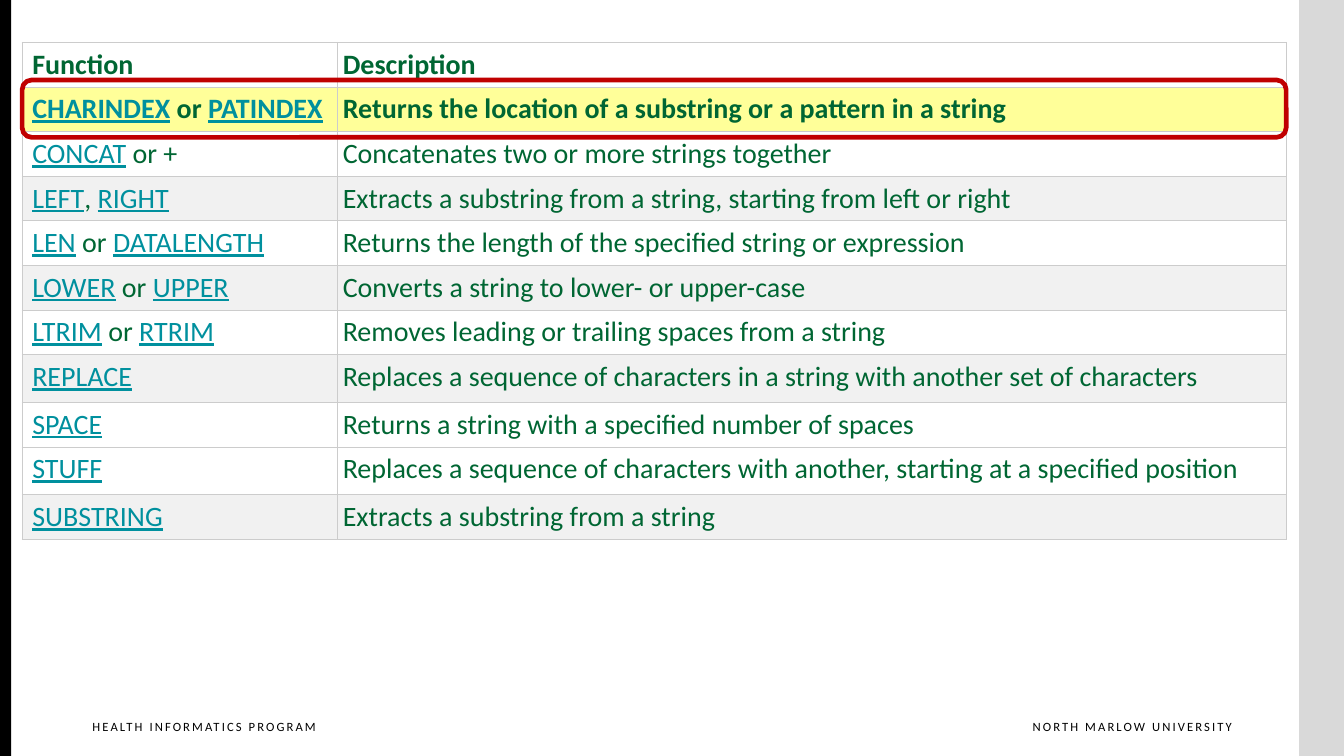
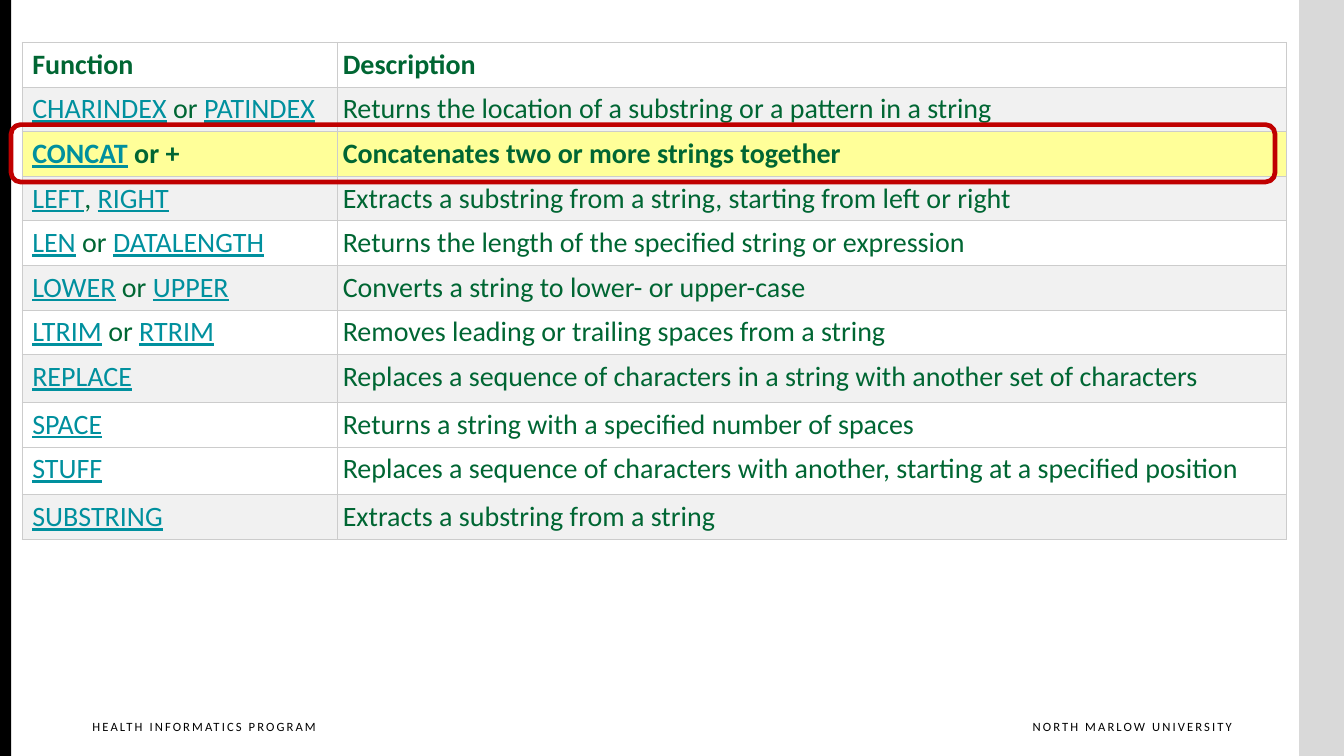
"""Builds two slides of SQL string functions, each with one row highlighted."""
from lxml import etree
from pptx import Presentation
from pptx.dml.color import RGBColor
from pptx.enum.shapes import MSO_SHAPE
from pptx.enum.text import PP_ALIGN
from pptx.oxml.ns import qn
from pptx.util import Pt

RECT, ROUNDED = MSO_SHAPE.RECTANGLE, MSO_SHAPE.ROUNDED_RECTANGLE
LEFT, RIGHT = PP_ALIGN.LEFT, PP_ALIGN.RIGHT

HEADER = (("Function",), "Description")
FUNCTIONS = [
    (("CHARINDEX", " or ", "PATINDEX"), "Returns the location of a substring or a pattern in a string"),
    (("CONCAT", " or +"), "Concatenates two or more strings together"),
    (("LEFT", ", ", "RIGHT"), "Extracts a substring from a string, starting from left or right"),
    (("LEN", " or ", "DATALENGTH"), "Returns the length of the specified string or expression"),
    (("LOWER", " or ", "UPPER"), "Converts a string to lower- or upper-case"),
    (("LTRIM", " or ", "RTRIM"), "Removes leading or trailing spaces from a string"),
    (("REPLACE",), "Replaces a sequence of characters in a string with another set of characters"),
    (("SPACE",), "Returns a string with a specified number of spaces"),
    (("STUFF",), "Replaces a sequence of characters with another, starting at a specified position"),
    (("SUBSTRING",), "Extracts a substring from a string"),
]
ROWS = [HEADER] + FUNCTIONS
SHADED_ROWS = {1, 3, 5, 7, 10}
TALL_ROWS = {7, 9}


def rgb(value):
    return RGBColor.from_string(value)


class Deck:
    FONT = "Calibri"
    TEXT, LINK, BLACK = "006633", "00909E", "000000"
    WHITE, SHADE, YELLOW = "FFFFFF", "F1F1F1", "FFFF99"
    GRID, RED, GREY = "CCCCCC", "C00000", "D9D9D9"
    WIDTH, HEIGHT = 960, 540
    TABLE_LEFT, TABLE_TOP = 15.84, 30.24
    COLUMNS = (225.4, 677.5)
    ROW, TALL_ROW = 31.9, 34

    def __init__(self):
        self.prs = Presentation()
        self.prs.slide_width, self.prs.slide_height = Pt(self.WIDTH), Pt(self.HEIGHT)
        self.s = None

    def new_slide(self):
        self.s = self.prs.slides.add_slide(self.prs.slide_layouts[6])
        self.band(928, 32, self.GREY)
        self.band(0, 8, self.BLACK)
        self.footer("NORTH MARLOW UNIVERSITY", 710.6, 169.2, RIGHT)
        self.footer("HEALTH INFORMATICS PROGRAM", 59, 182.9, LEFT)

    def band(self, x, width, color):
        sp = self.s.shapes.add_shape(RECT, Pt(x), 0, Pt(width), Pt(self.HEIGHT))
        sp.shadow.inherit = False
        sp.fill.solid()
        sp.fill.fore_color.rgb = rgb(color)
        sp.line.fill.background()

    def footer(self, text, x, width, align):
        sp = self.s.shapes.add_textbox(Pt(x), Pt(509.8), Pt(width), Pt(23.8))
        tf = sp.text_frame
        tf.word_wrap = True
        tf.margin_right = 0
        p = tf.paragraphs[0]
        p.alignment = align
        self.style(p.font, 9, self.BLACK)
        r = p.add_run()
        r.text = text
        r.font._element.set("spc", "150")

    def style(self, font, size, color, bold=False):
        font.name, font.size, font.bold = self.FONT, Pt(size), bold
        font.color.rgb = rgb(color)

    def table(self, highlighted):
        heights = [self.TALL_ROW if i in TALL_ROWS else self.ROW for i in range(len(ROWS))]
        table = self.s.shapes.add_table(
            len(ROWS), len(self.COLUMNS), Pt(self.TABLE_LEFT), Pt(self.TABLE_TOP),
            Pt(sum(self.COLUMNS)), Pt(sum(heights))).table
        table.first_row = table.horz_banding = False
        for column, width in zip(table.columns, self.COLUMNS):
            column.width = Pt(width)
        for i, (names, description) in enumerate(ROWS):
            table.rows[i].height = Pt(heights[i])
            fill = self.SHADE if i in SHADED_ROWS else self.WHITE
            if i == highlighted:
                fill = self.YELLOW
            bold = i in (0, highlighted)
            self.cell(table.cell(i, 0), names, fill, bold, 7.2, linked=i > 0)
            self.cell(table.cell(i, 1), (description,), fill, bold, 3.6)

    def cell(self, cell, pieces, fill, bold, left, linked=False):
        cell.margin_left = Pt(left)
        cell.margin_top = cell.margin_right = cell.margin_bottom = Pt(3.6)
        cell.fill.solid()
        cell.fill.fore_color.rgb = rgb(fill)
        self.borders(cell)
        p = cell.text_frame.paragraphs[0]
        self.style(p.font, 20, self.TEXT, bold)
        for i, piece in enumerate(pieces):
            r = p.add_run()
            r.text = piece
            is_link = linked and i % 2 == 0
            self.style(r.font, 20, self.LINK if is_link else self.TEXT, bold)
            r.font.underline = is_link

    def borders(self, cell):
        tc_pr = cell._tc.get_or_add_tcPr()
        for i, side in enumerate(("lnL", "lnR", "lnT", "lnB")):
            ln = etree.Element(qn("a:" + side), w=str(Pt(0.75)))
            solid = etree.SubElement(ln, qn("a:solidFill"))
            etree.SubElement(solid, qn("a:srgbClr"), val=self.GRID)
            tc_pr.insert(i, ln)

    def frame(self, row, x):
        y = self.TABLE_TOP + row * self.ROW - 5
        sp = self.s.shapes.add_shape(ROUNDED, Pt(x), Pt(y), Pt(sum(self.COLUMNS)), Pt(41))
        sp.shadow.inherit = False
        sp.fill.background()
        sp.line.color.rgb = rgb(self.RED)
        sp.line.width = Pt(3.35)


def main():
    deck = Deck()
    for row, frame_left in ((1, Deck.TABLE_LEFT), (2, 7.92)):
        deck.new_slide()
        deck.table(row)
        deck.frame(row, frame_left)
    deck.prs.save("out.pptx")


if __name__ == "__main__":
    main()
